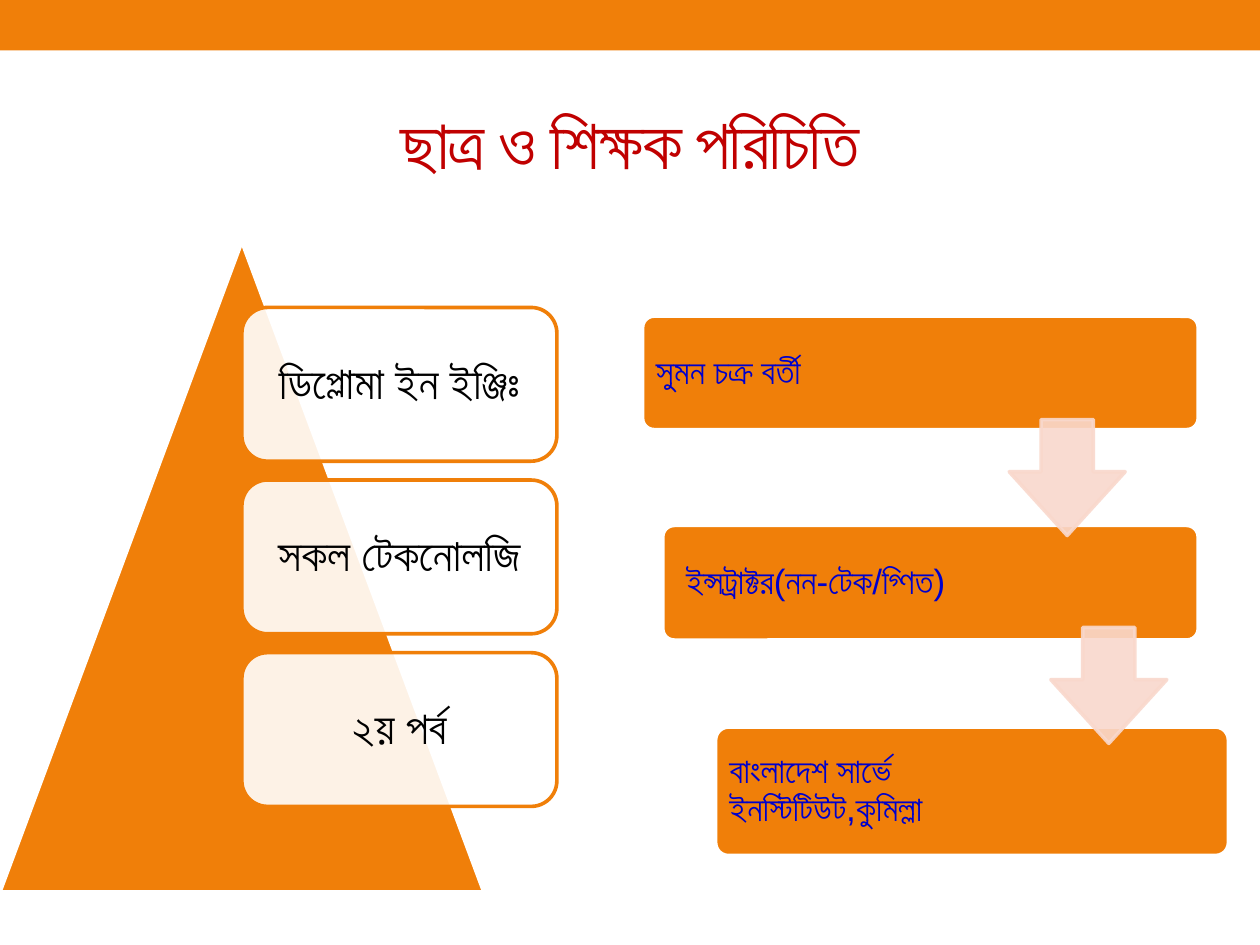
from lxml.etree import SubElement
from pptx import Presentation
from pptx.dml.color import RGBColor
from pptx.enum.shapes import MSO_SHAPE as SHAPE
from pptx.enum.text import MSO_ANCHOR as ANCHOR, PP_ALIGN as ALIGN
from pptx.oxml.ns import qn
from pptx.util import Inches, Pt

# Content
TITLE = "ছাত্র ও শিক্ষক পরিচিতি"
STUDENT_CARDS = ["ডিপ্লোমা ইন ইঞ্জিঃ", "সকল টেকনোলজি", "২য় পর্ব"]
TEACHER_STEPS = [  # text, box, text width, left inset
    ("সুমন চক্র বর্তী", (5.1, 2.51, 4.41, 0.9), 2.65, 0.08),
    ("ইন্সট্রাক্টর(নন-টেক/গ্ণিত)", (5.26, 4.17, 4.25, 0.91), 2.78, 0.16),
    ("বাংলাদেশ সার্ভে ইনস্টিটিউট,কুমিল্লা", (5.68, 5.77, 4.07, 1.02), 2.65, 0.08),
]
ARROWS = [(8.01, 3.33), (8.34, 4.98)]

FONT = "Arial"
ORANGE, WHITE, PINK = "F07F09", "FFFFFF", "F9D8CC"
RED, BLUE, BLACK = "C00000", "0000CC", "000000"
LINE_WIDTH = 2.08
CARD_LEFT, CARD_TOP, CARD_W, CARD_H, CARD_PITCH = 1.92, 2.44, 2.5, 1.22, 1.37
ARROW_SIZE = 0.92


def set_color(fmt, color):
    fmt.solid()
    fmt.fore_color.rgb = RGBColor.from_string(color)


def set_alpha(element, percent):
    for clr in element.iter(qn("a:srgbClr")):
        SubElement(clr, qn("a:alpha")).set("val", str(percent * 1000))


def add_shape(kind, box, fill, line=None, adjust=()):
    sp = s.shapes.add_shape(kind, *map(Inches, box))
    sp.shadow.inherit = False
    set_color(sp.fill, fill)
    if line:
        set_color(sp.line.fill, line)
        sp.line.width = Pt(LINE_WIDTH)
    else:
        sp.line.fill.background()
    for i, value in enumerate(adjust):
        sp.adjustments[i] = value
    return sp


def write(sp, text, size, color, align=ALIGN.LEFT, insets=None, spacing=None):
    tf = sp.text_frame
    tf.word_wrap = True
    tf.vertical_anchor = ANCHOR.MIDDLE
    if insets:
        (tf.margin_left, tf.margin_top,
         tf.margin_right, tf.margin_bottom) = map(Inches, insets)
    p = tf.paragraphs[0]
    p.alignment = align
    if spacing:
        p.line_spacing = spacing
    r = p.add_run()
    r.text = text
    r.font.size = Pt(size)
    r.font.name = FONT
    set_color(r.font.fill, color)
    return r


prs = Presentation()
prs.slide_width, prs.slide_height = Inches(10), Inches(7.5)
s = prs.slides.add_slide(prs.slide_layouts[5])

# Top band and title
add_shape(SHAPE.RECTANGLE, (0, 0, 10, 0.4), ORANGE)
title = s.shapes.title
title.left, title.top, title.width, title.height = map(Inches, (0.5, 0.58, 9, 1.08))
r = write(title, TITLE, 40, RED, align=ALIGN.CENTER)
r.font._element.set("spc", "-100")

# Student pyramid with its cards
add_shape(SHAPE.ISOSCELES_TRIANGLE, (0, 1.92, 3.84, 5.16), ORANGE, WHITE)
for i, text in enumerate(STUDENT_CARDS):
    box = (CARD_LEFT, CARD_TOP + i * CARD_PITCH, CARD_W, CARD_H)
    card = add_shape(SHAPE.ROUNDED_RECTANGLE, box, WHITE, ORANGE)
    set_alpha(card.fill._xPr.find(qn("a:solidFill")), 90)
    write(card, text, 26, BLACK, align=ALIGN.CENTER, insets=[0.11] * 4, spacing=0.9)

# Teacher steps, text kept clear of the arrows
for text, box, text_width, left_inset in TEACHER_STEPS:
    step = add_shape(SHAPE.ROUNDED_RECTANGLE, box, ORANGE, WHITE, adjust=[0.1])
    right_inset = box[2] - text_width + 0.02
    write(step, text, 20, BLUE, insets=(left_inset, 0.08, right_inset, 0.08), spacing=0.9)

# Arrows between the steps
for left, top in ARROWS:
    arrow = add_shape(SHAPE.DOWN_ARROW, (left, top, ARROW_SIZE, ARROW_SIZE),
                      PINK, PINK, adjust=[0.55, 0.45])
    # python-pptx lists the head length first in the shape's own order
    arrow.adjustments[0], arrow.adjustments[1] = 0.45, 0.55
    set_alpha(arrow.fill._xPr, 90)

prs.save("out.pptx")
